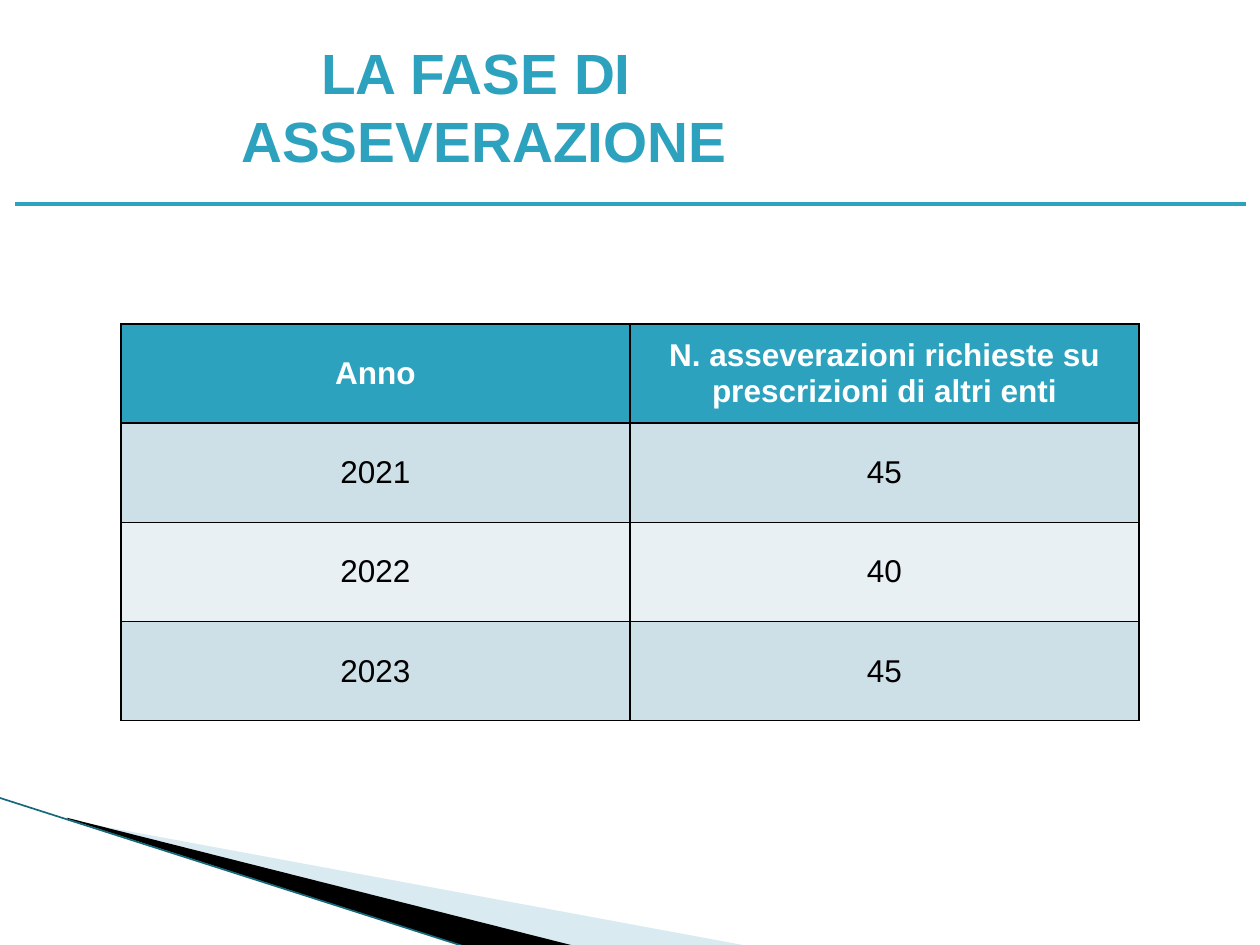
from dataclasses import dataclass

from lxml import etree
from pptx import Presentation
from pptx import util as u
from pptx.dml import color
from pptx.enum import shapes, text
from pptx.oxml import ns


@dataclass(frozen=True)
class Theme:
    font: str = "Arial"
    accent: str = "2DA2BF"
    edge: str = "16697A"
    pale: str = "A0CBDC"
    black: str = "000000"
    white: str = "FFFFFF"
    bands: tuple = ("CDE0E8", "E8F0F4")
    title_size: float = 32.4
    table_size: float = 18


THEME = Theme()
ROWS = [
    ("Anno", "N. asseverazioni richieste su prescrizioni di altri enti"),
    ("2021", "45"),
    ("2022", "40"),
    ("2023", "45"),
]


def rgb(value):
    return color.RGBColor.from_string(value)


def paint(fill, value):
    fill.solid()
    fill.fore_color.rgb = rgb(value)


def format_text(frame, size, value, bold):
    for paragraph in frame.paragraphs:
        paragraph.alignment = text.PP_ALIGN.CENTER
        for run in paragraph.runs:
            run.font.name = THEME.font
            run.font.size = u.Pt(size)
            run.font.bold = bold
            run.font.color.rgb = rgb(value)


def add_line(slide, start, end, value, width):
    points = [u.Inches(length) for length in (*start, *end)]
    connector = slide.shapes.add_connector(shapes.MSO_CONNECTOR.STRAIGHT, *points)
    connector.line.color.rgb = rgb(value)
    connector.line.width = u.Pt(width)
    etree.SubElement(connector._element.spPr, ns.qn("a:effectLst"))


def add_wedge(slide, left, top, points, value, opacity=100):
    corners = [(u.Inches(left + x), u.Inches(top + y)) for x, y in points]
    builder = slide.shapes.build_freeform(*corners[0])
    builder.add_line_segments(corners[1:], close=True)
    shape = builder.convert_to_shape()
    shape.shadow.inherit = False
    shape.line.fill.background()
    paint(shape.fill, value)
    if opacity < 100:
        tint = shape._element.spPr.find(".//" + ns.qn("a:srgbClr"))
        etree.SubElement(tint, ns.qn("a:alpha"), val=str(opacity * 1000))


def add_corner(slide, left, top, width, height):
    add_wedge(slide, left + 0.56, top + 0.17,
              [(0, 0.01), (width - 0.56, 1.01), (4.01, 1.01), (0, 0)],
              THEME.pale, opacity=40)
    add_wedge(slide, left + 0.54, top + 0.16,
              [(0, 0), (4.04, 1.02), (3.19, 1.03), (0.01, 0.01)], THEME.black)
    add_line(slide, (left, top), (left + 3.72, top + height), THEME.edge, 0.95)


def add_title(slide, left, top, width, height):
    box = slide.shapes.add_textbox(*map(u.Inches, (left, top, width, height)))
    frame = box.text_frame
    frame.word_wrap = True
    frame.margin_left = u.Inches(0.22)
    frame.text = "LA FASE DI \vASSEVERAZIONE"
    format_text(frame, THEME.title_size, THEME.accent, True)


def add_border(cell):
    properties = cell._tc.get_or_add_tcPr()
    for position, side in enumerate(("lnL", "lnR", "lnT", "lnB")):
        line = etree.Element(ns.qn(f"a:{side}"), w=str(u.Pt(1)))
        fill = etree.SubElement(line, ns.qn("a:solidFill"))
        etree.SubElement(fill, ns.qn("a:srgbClr"), val=THEME.black)
        properties.insert(position, line)


def add_year_table(slide, left, top, width, height):
    frame = slide.shapes.add_table(
        len(ROWS), len(ROWS[0]), *map(u.Inches, (left, top, width, height)))
    for row_index, values in enumerate(ROWS):
        header = row_index == 0
        background = THEME.accent if header else THEME.bands[(row_index - 1) % 2]
        for column_index, value in enumerate(values):
            cell = frame.table.cell(row_index, column_index)
            cell.text_frame.text = value
            cell.vertical_anchor = text.MSO_ANCHOR.MIDDLE
            paint(cell.fill, background)
            format_text(cell.text_frame, THEME.table_size,
                        THEME.white if header else THEME.black, header)
            add_border(cell)


def main():
    presentation = Presentation()
    presentation.slide_width = u.Inches(10)
    presentation.slide_height = u.Inches(7.5)
    slide = presentation.slides.add_slide(presentation.slide_layouts[6])
    paint(slide.background.fill, THEME.white)
    add_corner(slide, -0.01, 6.33, 5.96, 1.19)
    add_line(slide, (0.12, 1.62), (9.89, 1.62), THEME.accent, 2)
    add_title(slide, -0.59, 0.25, 8.74, 1.15)
    add_year_table(slide, 0.96, 2.57, 8.08, 3.15)
    presentation.save("out.pptx")


if __name__ == "__main__":
    main()
